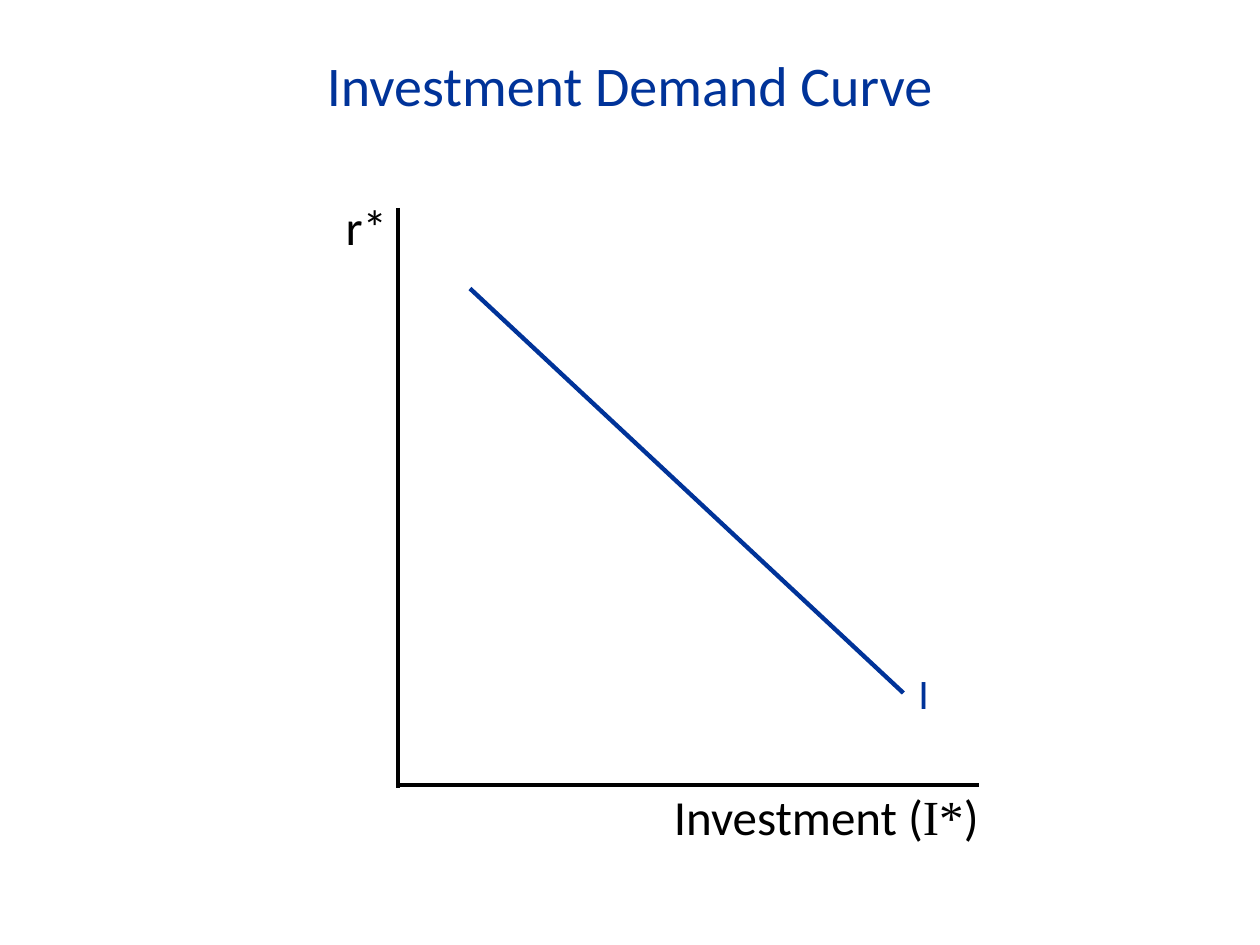
from pptx import Presentation
from pptx.dml.color import RGBColor
from pptx.enum.shapes import MSO_CONNECTOR
from pptx.enum.text import MSO_ANCHOR, PP_ALIGN
from pptx.oxml.ns import qn
from pptx.util import Inches, Pt
from lxml.etree import SubElement

BLUE = RGBColor(0x00, 0x33, 0x99)
BLACK = RGBColor(0x00, 0x00, 0x00)


def write(tf, runs, size, color, align):
    """Fill the frame with one paragraph of (text, font) runs."""
    tf.word_wrap = True
    p = tf.paragraphs[0]
    p.alignment = align
    for text, font in runs:
        r = p.add_run()
        r.text = text
        r.font.color.rgb = color
        for name, value in {"name": font, "size": Pt(size), "bold": False}.items():
            setattr(r.font, name, value)
    return p


prs = Presentation()
prs.slide_width, prs.slide_height = Inches(10), Inches(7.5)
s = prs.slides.add_slide(prs.slide_layouts[5])

# Title
title = s.shapes.title
title.left, title.top = Inches(0.7), Inches(0.35)
title.width, title.height = Inches(8.6), Inches(0.64)
title.text_frame.vertical_anchor = MSO_ANCHOR.MIDDLE
write(title.text_frame, [("Investment Demand Curve", "Calibri")], 32, BLUE, PP_ALIGN.CENTER)

# Axes and demand curve
lines = [
    (3.16, 1.65, 3.16, 6.25, BLACK),
    (3.17, 6.23, 7.77, 6.23, BLACK),
    (3.73, 2.29, 7.17, 5.5, BLUE),
]
for x1, y1, x2, y2, color in lines:
    line = s.shapes.add_connector(
        MSO_CONNECTOR.STRAIGHT, Inches(x1), Inches(y1), Inches(x2), Inches(y2))
    line.line.color.rgb = color
    line.line.width = Pt(2.5)
    SubElement(line._element.spPr, qn("a:effectLst"))

# Axis and curve labels
labels = [
    (5.25, 6.19, 2.7, 0.57, [("Investment (", "Calibri"), ("I*", "Times New Roman"),
                             (")", "Calibri")], 28, BLACK, PP_ALIGN.LEFT, 1.0),
    (1.67, 1.6, 1.5, 0.49, [("r*", "Calibri")], 28, BLACK, PP_ALIGN.RIGHT, 0.8),
    (6.89, 5.25, 0.58, 0.5, [("I", "Calibri")], 24, BLUE, PP_ALIGN.RIGHT, 1.0),
]
for x, y, w, h, runs, size, color, align, spacing in labels:
    box = s.shapes.add_textbox(Inches(x), Inches(y), Inches(w), Inches(h))
    p = write(box.text_frame, runs, size, color, align)
    p.line_spacing = spacing

prs.save("out.pptx")
